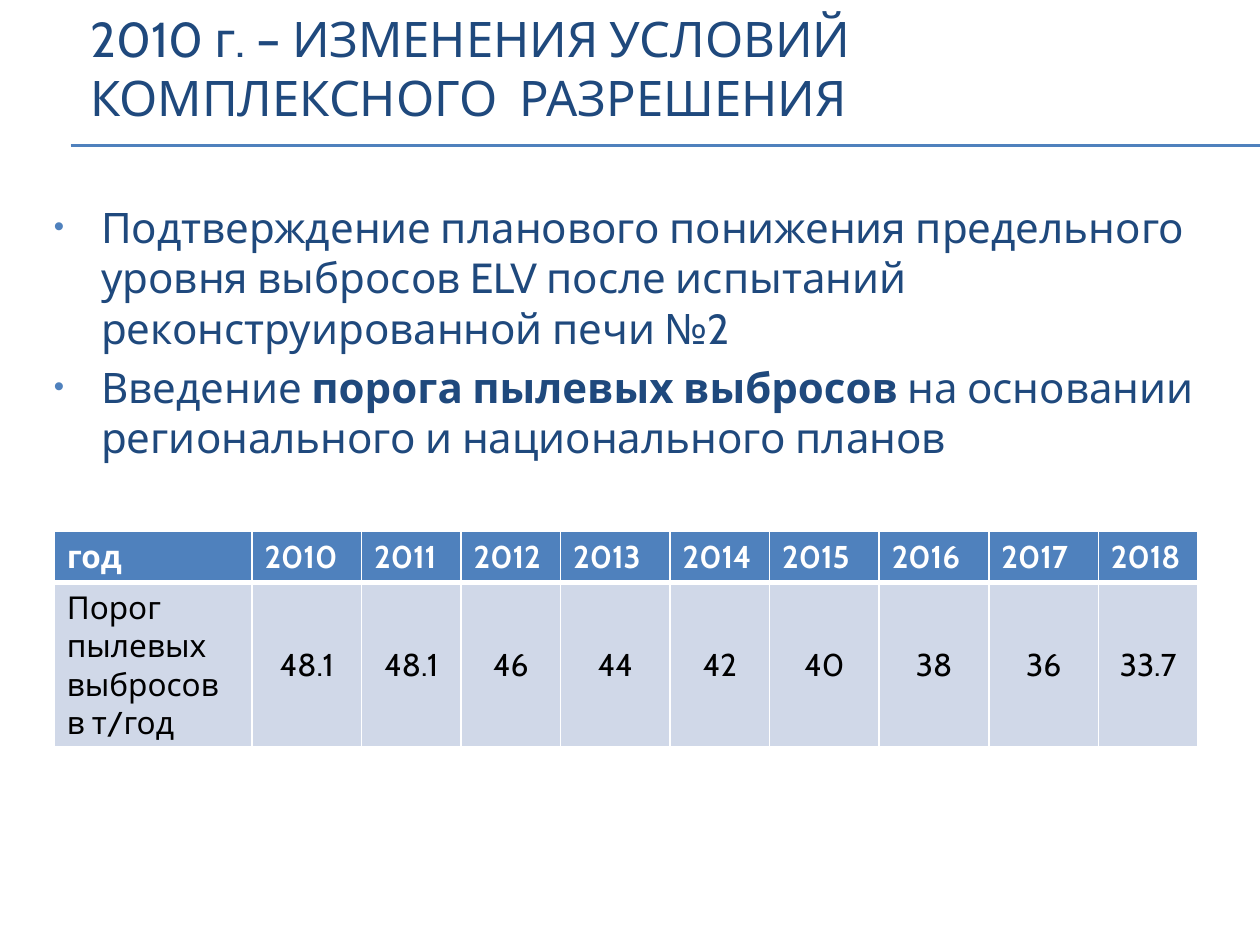
from lxml.etree import SubElement
from pptx import Presentation
from pptx.dml.color import RGBColor
from pptx.enum.shapes import MSO_CONNECTOR
from pptx.enum.text import MSO_ANCHOR, PP_ALIGN
from pptx.oxml import parse_xml
from pptx.oxml.ns import nsdecls, qn
from pptx.util import Inches, Pt

FONT = "Cabin"
NAVY, BLUE, PALE = "1F497D", "4F81BD", "D0D8E8"
WHITE, BLACK = "FFFFFF", "000000"


def tint(code):
    return RGBColor.from_string(code)


def style(para, size, code, bold=False):
    for run in para.runs:
        run.font.name = FONT
        run.font.size = Pt(size)
        run.font.bold = bold
        run.font.color.rgb = tint(code)


deck = Presentation()
deck.slide_width = Inches(10)
deck.slide_height = Inches(7.5)
col = deck.slide_width / 100
row = deck.slide_height / 100
slide = deck.slides.add_slide(deck.slide_layouts[6])

for y in (15.35, 15.45):
    rule = slide.shapes.add_connector(
        MSO_CONNECTOR.STRAIGHT, int(5.6 * col), int(y * row), int(100 * col), int(y * row))
    rule.line.color.rgb = tint(BLUE)
    rule.line.width = Pt(0.75)
    SubElement(rule._element.spPr, qn("a:effectLst"))

title = slide.shapes.add_textbox(
    int(6.2 * col), int(-0.4 * row), int(95 * col), int(15 * row))
frame = title.text_frame
frame.word_wrap = True
frame.vertical_anchor = MSO_ANCHOR.MIDDLE
frame.text = "2010 г. – ИЗМЕНЕНИЯ УСЛОВИЙ КОМПЛЕКСНОГО  РАЗРЕШЕНИЯ"
style(frame.paragraphs[0], 28, NAVY)

points = [
    ["Подтверждение планового понижения предельного уровня выбросов ELV "
     "после испытаний реконструированной печи №2"],
    ["Введение ", "порога пылевых выбросов",
     " на основании регионального и национального планов"],
]
body = slide.shapes.add_textbox(
    int(3.3 * col), int(20.67 * row), int(95 * col), int(66 * row))
frame = body.text_frame
frame.word_wrap = True
for i, parts in enumerate(points):
    para = frame.add_paragraph() if i else frame.paragraphs[0]
    props = para._p.get_or_add_pPr()
    props.set("marL", str(int(3.75 * col)))
    props.set("indent", str(int(-3.75 * col)))
    for xml in (f'<a:buClr {nsdecls("a")}><a:srgbClr val="{BLUE}"/></a:buClr>',
                f'<a:buSzPct {nsdecls("a")} val="70000"/>',
                f'<a:buFont {nsdecls("a")} typeface="Arial"/>',
                f'<a:buChar {nsdecls("a")} char="•"/>'):
        props.append(parse_xml(xml))
    if i:
        para.space_before = Pt(4.8)
    for text in parts:
        para.add_run().text = text
    style(para, 24, NAVY)
frame.paragraphs[1].runs[1].font.bold = True

rows = [
    ["год"] + [str(year) for year in range(2010, 2019)],
    ["Порог пылевых выбросов в т/год",
     "48.1", "48.1", "46", "44", "42", "40", "38", "36", "33.7"],
]
wide, slim = 8.7, 7.9
spans = [15.7, wide, slim, slim, wide, slim, wide, wide, wide, slim]
tall = [5.4, 17.4]
grid = slide.shapes.add_table(
    len(rows), len(spans), int(4.3 * col), int(56.27 * row),
    int(sum(spans) * col), int(sum(tall) * row)).table
for i, span in enumerate(spans):
    grid.columns[i].width = int(span * col)
for r, texts in enumerate(rows):
    grid.rows[r].height = int(tall[r] * row)
    head = r == 0
    for c, text in enumerate(texts):
        cell = grid.cell(r, c)
        cell.text_frame.text = text
        para = cell.text_frame.paragraphs[0]
        style(para, 18, WHITE if head else BLACK, head)
        if c and not head:
            para.alignment = PP_ALIGN.CENTER
            cell.vertical_anchor = MSO_ANCHOR.MIDDLE
        props = cell._tc.get_or_add_tcPr()
        for side in "LRTB":
            thick = 3 if (head and side == "B") or (not head and side == "T") else 1
            props.append(parse_xml(
                f'<a:ln{side} {nsdecls("a")} w="{Pt(thick)}"><a:solidFill>'
                f'<a:srgbClr val="{WHITE}"/></a:solidFill></a:ln{side}>'))
        cell.fill.solid()
        cell.fill.fore_color.rgb = tint(BLUE if head else PALE)

deck.save("out.pptx")
